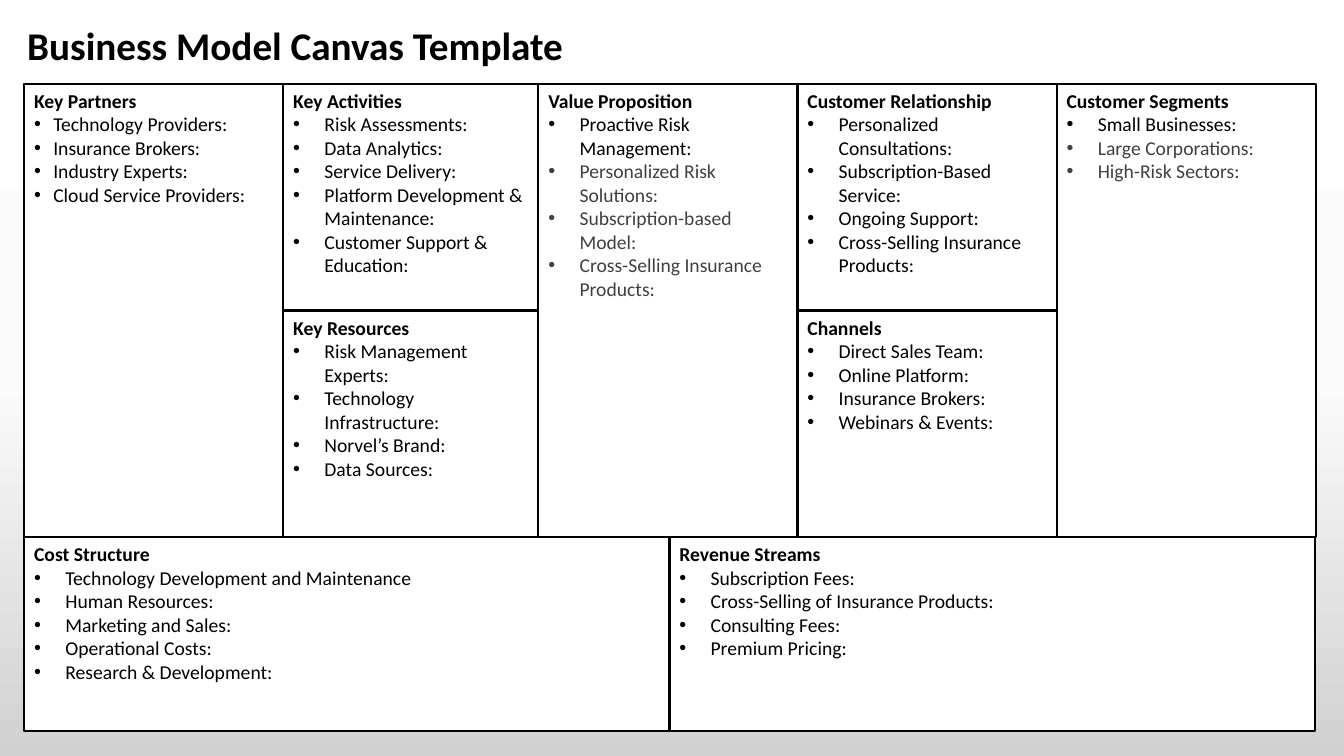
from copy import deepcopy

from lxml.etree import SubElement
from pptx import Presentation
from pptx.dml.color import RGBColor
from pptx.enum.shapes import MSO_SHAPE
from pptx.enum.text import MSO_ANCHOR, MSO_AUTO_SIZE, PP_ALIGN
from pptx.oxml.ns import qn
from pptx.util import Inches, Pt

BLACK = RGBColor(0x00, 0x00, 0x00)
WHITE = RGBColor(0xFF, 0xFF, 0xFF)
MUTED = RGBColor(0x40, 0x40, 0x40)
BACKDROP = [(0, WHITE), (0.5, RGBColor(0xFB, 0xFB, 0xFB)), (1, RGBColor(0xD1, 0xD1, 0xD1))]
FONT = "Calibri"

COLUMNS = [0.24, 2.81, 5.34, 7.91, 10.48]
COLUMN_WIDTH = 2.57
TOP, MIDDLE, BOTTOM = 0.83, 3.08, 5.33
HALF = MIDDLE - TOP
FULL = BOTTOM - TOP
FOOT_WIDTH, FOOT_HEIGHT = 6.4, 1.92
INDENT, NARROW_INDENT = 0.31, 0.19

# heading, (left, top, width, height), items, format of the items
BLOCKS = [
    ("Key Partners", (COLUMNS[0], TOP, COLUMN_WIDTH, FULL),
     ["Technology Providers:", "Insurance Brokers:", "Industry Experts:",
      "Cloud Service Providers:"], {"indent": NARROW_INDENT}),
    ("Key Activities", (COLUMNS[1], TOP, COLUMN_WIDTH, HALF),
     ["Risk Assessments:", "Data Analytics:", "Service Delivery:",
      "Platform Development & Maintenance:", "Customer Support & Education:"], {}),
    ("Key Resources", (COLUMNS[1], MIDDLE, COLUMNS[2] - COLUMNS[1], HALF),
     ["Risk Management Experts:", "Technology Infrastructure:", "Norvel’s Brand:",
      "Data Sources:"], {}),
    ("Value Proposition", (COLUMNS[2], TOP, COLUMN_WIDTH, FULL),
     ["Proactive Risk Management:", "Personalized Risk Solutions:",
      "Subscription-based Model:", "Cross-Selling Insurance Products:"],
     {"later_color": MUTED}),
    ("Customer Relationship", (COLUMNS[3], TOP, COLUMN_WIDTH, HALF),
     ["Personalized Consultations:", "Subscription-Based Service:", "Ongoing Support:",
      "Cross-Selling Insurance Products:"], {}),
    ("Channels", (COLUMNS[3], MIDDLE, COLUMN_WIDTH, HALF),
     ["Direct Sales Team:", "Online Platform:", "Insurance Brokers:",
      "Webinars & Events:"], {}),
    ("Customer Segments", (COLUMNS[4], TOP, COLUMN_WIDTH, FULL),
     ["Small Businesses:", "Large Corporations:", "High-Risk Sectors:"],
     {"later_color": MUTED}),
    ("Cost Structure", (COLUMNS[0], BOTTOM, FOOT_WIDTH, FOOT_HEIGHT),
     ["Technology Development and Maintenance", "Human Resources:",
      "Marketing and Sales:", "Operational Costs:", "Research & Development:"], {}),
    ("Revenue Streams", (COLUMNS[0] + FOOT_WIDTH, BOTTOM, FOOT_WIDTH, FOOT_HEIGHT),
     ["Subscription Fees:", "Cross-Selling of Insurance Products:", "Consulting Fees:",
      "Premium Pricing:"], {}),
]


def write(paragraph, text, size=14, color=BLACK, bold=False, indent=None):
    """Fill a paragraph; an indent in inches makes it a bullet."""
    paragraph.alignment = PP_ALIGN.LEFT
    run = paragraph.add_run()
    run.text = text
    run.font.name = FONT
    run.font.size = Pt(size)
    run.font.bold = bold
    run.font.color.rgb = color
    if indent:
        properties = paragraph._p.get_or_add_pPr()
        properties.set("marL", str(Inches(indent)))
        properties.set("indent", str(-Inches(indent)))
        SubElement(properties, qn("a:buFont")).set("typeface", "Arial")
        SubElement(properties, qn("a:buChar")).set("char", "•")


def paint_background(slide):
    fill = slide.background.fill
    fill.gradient()
    fill.gradient_angle = 270
    stop_list = slide.element.find(".//" + qn("a:gsLst"))
    stop_list.insert(1, deepcopy(stop_list[0]))
    for stop, (position, color) in zip(fill.gradient_stops, BACKDROP):
        stop.position = position
        stop.color.rgb = color


def add_title(slide, text):
    title = slide.shapes.title
    title.left, title.top = Inches(0.17), Inches(0.16)
    title.width, title.height = Inches(5.58), Inches(0.57)
    frame = title.text_frame
    frame.word_wrap = False
    frame.auto_size = MSO_AUTO_SIZE.SHAPE_TO_FIT_TEXT
    frame.vertical_anchor = MSO_ANCHOR.TOP
    write(frame.paragraphs[0], text, size=28, bold=True)


def add_block(slide, heading, box, items, indent=INDENT, later_color=BLACK):
    """Add one canvas cell; later_color applies to every item after the first."""
    block = slide.shapes.add_shape(MSO_SHAPE.ROUNDED_RECTANGLE, *map(Inches, box))
    block.adjustments[0] = 0
    block.shadow.inherit = False
    block.fill.solid()
    block.fill.fore_color.rgb = WHITE
    block.line.color.rgb = BLACK
    block.line.width = Pt(1.5)
    frame = block.text_frame
    frame.word_wrap = True
    frame.vertical_anchor = MSO_ANCHOR.TOP
    write(frame.paragraphs[0], heading, bold=True)
    for number, item in enumerate(items):
        color = later_color if number else BLACK
        write(frame.add_paragraph(), item, color=color, indent=indent)


def main():
    deck = Presentation()
    deck.slide_width, deck.slide_height = Inches(13.33), Inches(7.5)
    slide = deck.slides.add_slide(deck.slide_layouts.get_by_name("Title Only"))
    paint_background(slide)
    add_title(slide, "Business Model Canvas Template")
    for heading, box, items, style in BLOCKS:
        add_block(slide, heading, box, items, **style)
    deck.save("out.pptx")


if __name__ == "__main__":
    main()
